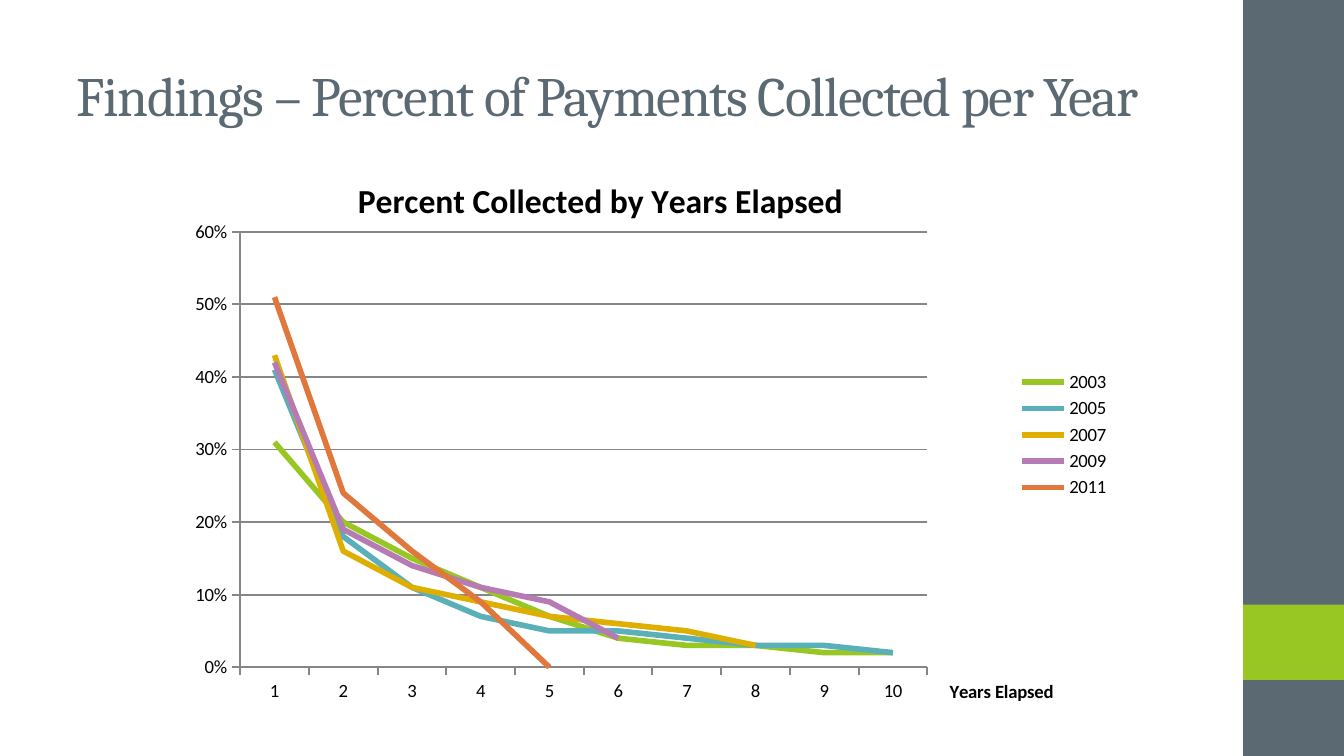
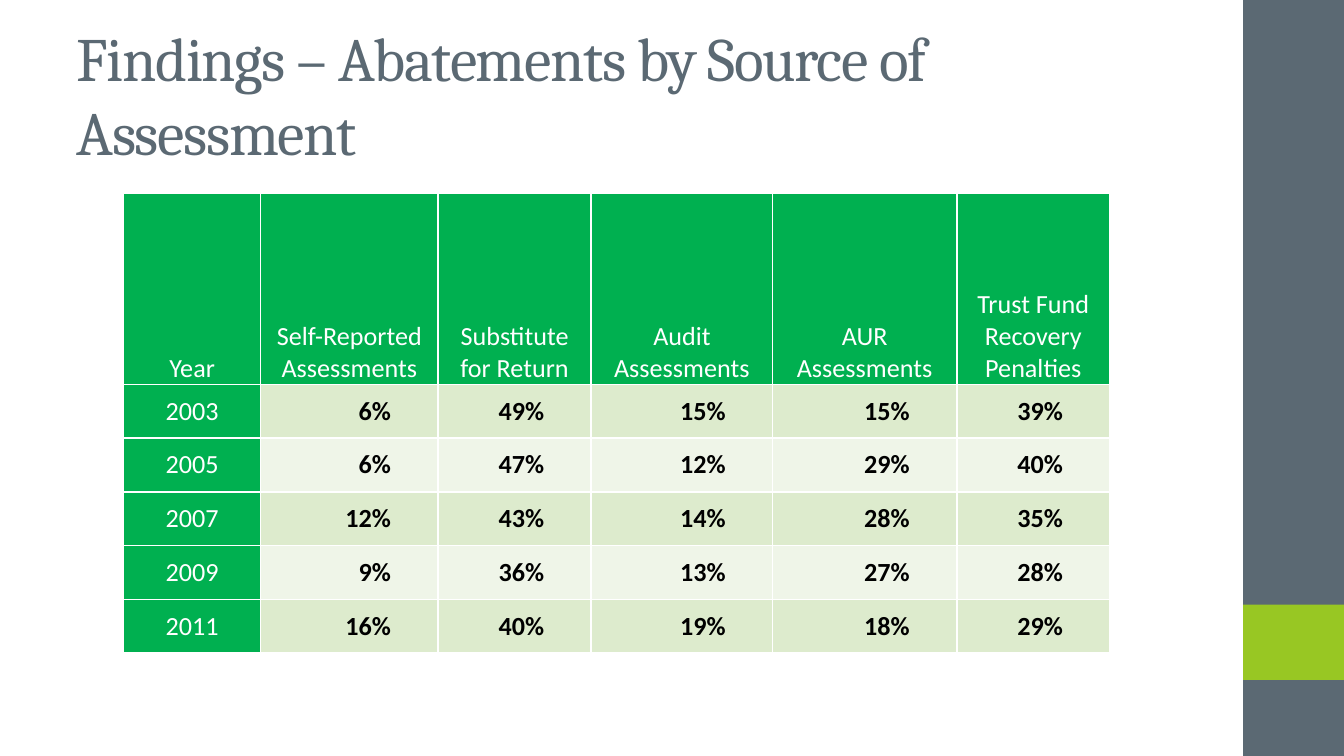
from dataclasses import dataclass

from lxml import etree
from pptx import Presentation
from pptx.chart.data import CategoryChartData
from pptx.dml.color import RGBColor
from pptx.enum import chart as kinds, shapes, text
from pptx.oxml.ns import qn
from pptx.util import Inches, Pt


@dataclass(frozen=True)
class Theme:
    slate: str = "5B6973"
    lime: str = "98C723"
    green: str = "00B050"
    tints: tuple = ("DDEBCD", "EFF5E8")
    lines: tuple = ("98C723", "59B0B9", "DEAE00", "B77BB4", "E0773C")
    grid: str = "868686"
    black: str = "000000"
    white: str = "FFFFFF"
    head: str = "Cambria"
    body: str = "Calibri"
    cell: float = 14
    label: float = 10
    caption: float = 18


THEME = Theme()
WIDE = Inches(10)
TALL = WIDE * 9 // 16
YEARS = ("2003", "2005", "2007", "2009", "2011")
RATES = (
    (0.31, 0.20, 0.15, 0.11, 0.07, 0.04, 0.03, 0.03, 0.02, 0.02),
    (0.41, 0.18, 0.11, 0.07, 0.05, 0.05, 0.04, 0.03, 0.03, 0.02),
    (0.43, 0.16, 0.11, 0.09, 0.07, 0.06, 0.05, 0.03),
    (0.42, 0.19, 0.14, 0.11, 0.09, 0.04),
    (0.51, 0.24, 0.16, 0.09, 0),
)
HEADS = ("Year", "Self-Reported Assessments", "Substitute for Return",
         "Audit Assessments", "AUR Assessments",
         "Trust Fund Recovery Penalties")
SHARES = (
    (6, 49, 15, 15, 39),
    (6, 47, 12, 29, 40),
    (12, 43, 14, 28, 35),
    (9, 36, 13, 27, 28),
    (16, 40, 19, 18, 29),
)
WIDTHS = (1.02, 1.32, 1.14, 1.35, 1.37, 1.14)


def rgb(code):
    return RGBColor.from_string(code)


def style(font, name, size, color, bold=False):
    font.name = name
    font.size = Pt(size)
    font.bold = bold
    font.color.rgb = rgb(color)


def add_band(deck, slide, ident, top, height, color):
    band = slide.shapes.add_shape(
        shapes.MSO_SHAPE.RECTANGLE, Inches(9.25), top, Inches(0.75), height)
    band.shadow.inherit = False
    band.fill.solid()
    band.fill.fore_color.rgb = rgb(color)
    band.line.fill.background()
    band.element.nvSpPr.cNvPr.set("id", str(ident))
    deck.slide_master.shapes.element.append(band.element)


def add_slide(deck, title, size):
    slide = deck.slides.add_slide(deck.slide_layouts[5])
    box = slide.shapes.title
    box.left, box.top = Inches(0.5), Inches(0.23)
    box.width, box.height = Inches(8.33), Inches(0.94)
    frame = box.text_frame
    frame.word_wrap = True
    frame.auto_size = text.MSO_AUTO_SIZE.NONE
    frame.vertical_anchor = text.MSO_ANCHOR.MIDDLE
    frame.margin_left = frame.margin_right = Inches(0.07)
    frame.margin_top = frame.margin_bottom = Inches(0.04)
    para = frame.paragraphs[0]
    para.alignment = text.PP_ALIGN.LEFT
    run = para.add_run()
    run.text = title
    style(run.font, THEME.head, size, THEME.slate)
    run.font._element.set("spc", "-70")
    return slide


def place(node, index, **marks):
    old = node.find(qn("c:layout"))
    if old is not None:
        node.remove(old)
    layout = etree.Element(qn("c:layout"))
    node.insert(index, layout)
    manual = etree.SubElement(layout, qn("c:manualLayout"))
    for tag, value in marks.items():
        etree.SubElement(manual, qn("c:" + tag)).set("val", str(value))


def add_label(title, words, size, x, y):
    run = title.text_frame.paragraphs[0].add_run()
    run.text = words
    style(run.font, THEME.body, size, THEME.black, True)
    place(title._element, 1, xMode="edge", yMode="edge", x=x, y=y)


def rule(line):
    line.color.rgb = rgb(THEME.grid)
    line.width = Pt(1)


def add_lines(slide):
    data = CategoryChartData(number_format="0%")
    data.categories = [str(n) for n in range(1, 11)]
    for year, rates in zip(YEARS, RATES):
        data.add_series(year, rates + (None,) * (10 - len(rates)))
    chart = slide.shapes.add_chart(
        kinds.XL_CHART_TYPE.LINE, Inches(0.6), Inches(1.15),
        Inches(7.76), Inches(4.17), data).chart
    style(chart.font, THEME.body, THEME.label, THEME.black)
    chart.has_title = True
    add_label(chart.chart_title, "Percent Collected by Years Elapsed",
              THEME.caption, 0.26, 0.03)
    chart.has_legend = True
    chart.legend.position = kinds.XL_LEGEND_POSITION.RIGHT
    chart.legend.include_in_layout = False
    place(chart._chartSpace.chart.plotArea, 0, layoutTarget="inner",
          xMode="edge", yMode="edge", x=0.153, y=0.138, w=0.659, h=0.777)

    years, rates = chart.category_axis, chart.value_axis
    add_label(years.axis_title, "Years Elapsed", THEME.label, 0.83, 0.93)
    rates.minimum_scale, rates.maximum_scale = 0, 0.6
    rates.major_unit = 0.1
    rates.tick_labels.number_format = "0%"
    rates.tick_labels.number_format_is_linked = False
    rates.has_major_gridlines = True
    rule(rates.major_gridlines.format.line)
    for axis in (years, rates):
        axis.major_tick_mark = kinds.XL_TICK_MARK.OUTSIDE
        axis.minor_tick_mark = kinds.XL_TICK_MARK.NONE
        rule(axis.format.line)

    chart.plots[0].vary_by_categories = False
    for series, color in zip(chart.plots[0].series, THEME.lines):
        series.smooth = False
        series.format.line.color.rgb = rgb(color)
        series.format.line.width = Pt(3)


def add_edges(cell):
    props = cell._tc.get_or_add_tcPr()
    for side in ("lnL", "lnR", "lnT", "lnB"):
        line = etree.SubElement(props, qn("a:" + side), w=str(Pt(1)))
        fill = etree.SubElement(line, qn("a:solidFill"))
        etree.SubElement(fill, qn("a:srgbClr"), val=THEME.white)


def fill_cell(cell, words, fill, anchor, value=False):
    add_edges(cell)
    cell.fill.solid()
    cell.fill.fore_color.rgb = rgb(fill)
    cell.vertical_anchor = anchor
    cell.margin_top = cell.margin_bottom = 0
    cell.margin_left = Inches(0.08 if value else 0.07)
    cell.margin_right = Inches(0.35 if value else 0.07)
    para = cell.text_frame.paragraphs[0]
    para.alignment = text.PP_ALIGN.RIGHT if value else text.PP_ALIGN.CENTER
    run = para.add_run()
    run.text = words
    color = THEME.black if value else THEME.white
    style(run.font, THEME.body, THEME.cell, color, value)


def add_grid(slide):
    table = slide.shapes.add_table(
        len(YEARS) + 1, len(HEADS), Inches(0.92), Inches(1.44),
        Inches(sum(WIDTHS)), Inches(3.43)).table
    table.horz_banding = False
    for col, width in zip(table.columns, WIDTHS):
        col.width = Inches(width)
    for n, row in enumerate(table.rows):
        row.height = Inches(0.4 if n else 1.42)
    for n, head in enumerate(HEADS):
        fill_cell(table.cell(0, n), head, THEME.green,
                  text.MSO_ANCHOR.BOTTOM)
    for n, (year, shares) in enumerate(zip(YEARS, SHARES)):
        fill_cell(table.cell(n + 1, 0), year, THEME.green,
                  text.MSO_ANCHOR.MIDDLE)
        for col, share in enumerate(shares, 1):
            fill_cell(table.cell(n + 1, col), f"{share}%",
                      THEME.tints[n % 2], text.MSO_ANCHOR.MIDDLE, True)


def main():
    deck = Presentation()
    deck.slide_width, deck.slide_height = WIDE, TALL

    trend = add_slide(
        deck, "Findings – Percent of Payments Collected per Year", 29.7)
    add_band(deck, trend, 101, 0, TALL, THEME.slate)
    add_band(deck, trend, 102, Inches(4.5), Inches(0.56), THEME.lime)
    add_lines(trend)

    source = add_slide(
        deck, "Findings – Abatements by Source of Assessment", 33)
    add_grid(source)
    deck.save("out.pptx")


if __name__ == "__main__":
    main()
